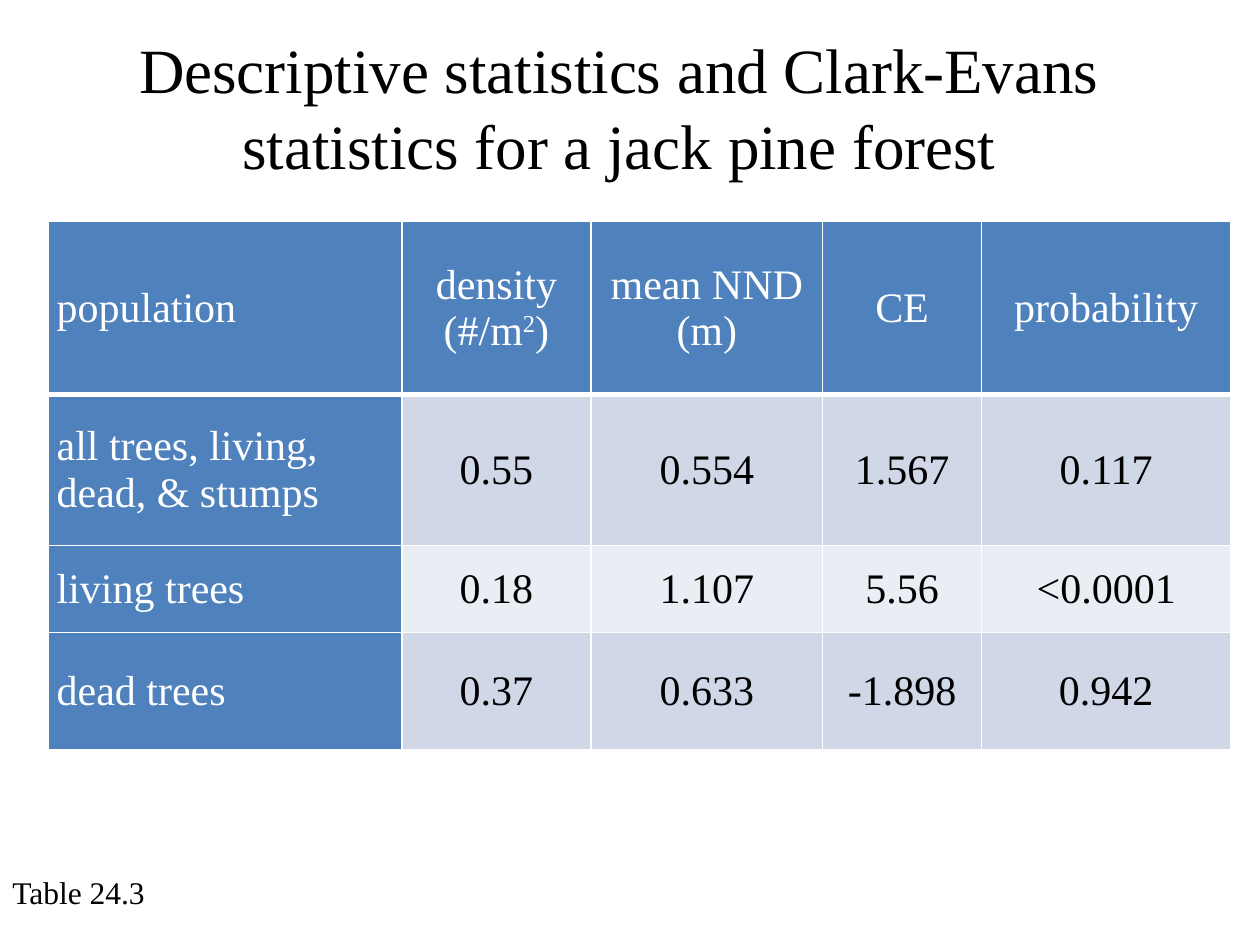
from dataclasses import dataclass
from lxml.etree import SubElement
from pptx import Presentation
from pptx.dml.color import RGBColor
from pptx.enum.text import MSO_ANCHOR, PP_ALIGN
from pptx.oxml.ns import qn
from pptx.util import Inches, Pt


@dataclass(frozen=True)
class Theme:
    font: str = "Times New Roman"
    ink: str = "000000"
    white: str = "FFFFFF"
    head: str = "4F81BD"
    bands: tuple = ("D0D8E8", "E9EDF4")
    title: int = 36
    body: int = 24
    note: int = 18


theme = Theme()


def style(par, size, color, align):
    par.alignment = align
    for run in par.runs:
        run.font.name = theme.font
        run.font.size = Pt(size)
        run.font.color.rgb = RGBColor.from_string(color)


def edge(cell, side, width):
    line = SubElement(cell._tc.get_or_add_tcPr(), qn(f"a:{side}"), w=str(Pt(width)))
    fill = SubElement(line, qn("a:solidFill"))
    SubElement(fill, qn("a:srgbClr"), val=theme.white)


prs = Presentation()
prs.slide_width, prs.slide_height = Inches(10), Inches(7.5)
slide = prs.slides.add_slide(prs.slide_layouts[5])

# Title
title = slide.shapes.title
title.left, title.top = Inches(0.2), Inches(0.19)
title.width, title.height = Inches(9.43), Inches(1.31)
title.text_frame.text = "Descriptive statistics and Clark-Evans statistics for a jack pine forest"
style(title.text_frame.paragraphs[0], theme.title, theme.ink, PP_ALIGN.CENTER)

# Table number
note = slide.shapes.add_textbox(Inches(0), Inches(6.88), Inches(1.33), Inches(0.4))
note.text_frame.word_wrap = False
note.text_frame.text = "Table 24.3"
style(note.text_frame.paragraphs[0], theme.note, theme.ink, PP_ALIGN.LEFT)

# Statistics; text between carets is superscript
data = [
    ["population", "density (#/m^2^)", "mean NND (m)", "CE", "probability"],
    ["all trees, living, dead, & stumps", "0.55", "0.554", "1.567", "0.117"],
    ["living trees", "0.18", "1.107", "5.56", "<0.0001"],
    ["dead trees", "0.37", "0.633", "-1.898", "0.942"],
]
widths = [2.81, 1.5, 1.84, 1.26, 1.98]
heights = [1.37, 1.2, 0.69, 0.93]

# Table grid
frame = slide.shapes.add_table(len(data), len(widths), Inches(0.38), Inches(1.76),
                               Inches(sum(widths)), Inches(sum(heights)))
table = frame.table
table.first_col = True
for col, width in zip(table.columns, widths):
    col.width = Inches(width)
for row, height in zip(table.rows, heights):
    row.height = Inches(height)

# Table cells
for r, values in enumerate(data):
    for c, value in enumerate(values):
        cell = table.cell(r, c)
        label = r == 0 or c == 0
        cell.vertical_anchor = MSO_ANCHOR.MIDDLE
        cell.margin_left = cell.margin_right = Inches(0.07)
        cell.margin_top = cell.margin_bottom = 0
        for side in ("lnL", "lnR", "lnT", "lnB"):
            rule = (r, side) in ((0, "lnB"), (1, "lnT"))
            edge(cell, side, 3 if rule else 1)
        cell.fill.solid()
        cell.fill.fore_color.rgb = RGBColor.from_string(
            theme.head if label else theme.bands[(r - 1) % 2])
        par = cell.text_frame.paragraphs[0]
        for i, part in enumerate(value.split("^")):
            run = par.add_run()
            run.text = part
            run.font.bold = False
            if i % 2:
                run._r.get_or_add_rPr().set("baseline", "30000")
        style(par, theme.body, theme.white if label else theme.ink,
              PP_ALIGN.CENTER if c else PP_ALIGN.LEFT)

prs.save("out.pptx")
